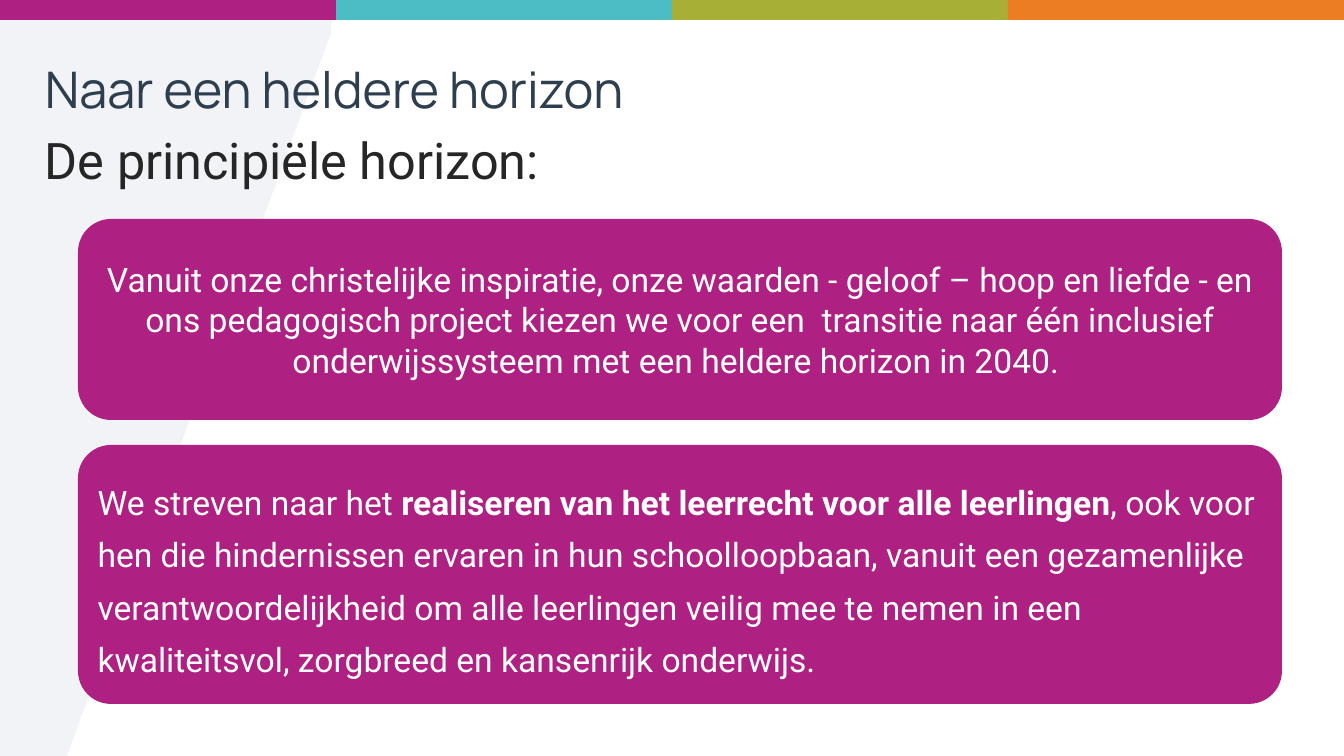
from lxml.etree import SubElement
from pptx import Presentation
from pptx.dml.color import RGBColor
from pptx.enum.shapes import MSO_SHAPE
from pptx.enum.text import MSO_ANCHOR, PP_ALIGN
from pptx.oxml.ns import qn
from pptx.util import Pt

SCALE = 914400 / 100.8
WIDE, HIGH = 1344, 756
RADIUS = 33
HUES = {
    "plum": "AE2081", "teal": "4CBCC5", "olive": "A8AF37", "orange": "EC7D23",
    "mist": "E8ECF0", "navy": "2D3E4E", "ink": "262626", "white": "FFFFFF",
}


def px(count):
    return round(count * SCALE)


def paint(shape, hue):
    shape.shadow.inherit = False
    shape.fill.solid()
    shape.fill.fore_color.rgb = RGBColor.from_string(HUES[hue])
    shape.line.fill.background()


def style(run, size, face, hue, bold=False):
    run.font.size = Pt(size)
    run.font.name = face
    run.font.bold = bold
    run.font.color.rgb = RGBColor.from_string(HUES[hue])


def add_slant(slide, points):
    """Draw the pale, half-clear band behind the text."""
    pen = slide.shapes.build_freeform(*points[0], scale=SCALE)
    pen.add_line_segments(points[1:], close=True)
    slant = pen.convert_to_shape()
    paint(slant, "mist")
    tint = slant.fill._xPr.find(qn("a:solidFill"))[0]
    SubElement(tint, qn("a:alpha")).set("val", "59000")


def add_stripe(slide, left, top, width, height, hues):
    step = width / len(hues)
    for i, hue in enumerate(hues):
        bar = slide.shapes.add_shape(
            MSO_SHAPE.RECTANGLE, px(left + i * step), px(top), px(step), px(height))
        paint(bar, hue)


def add_head(slide, left, top, width, height, text, face, hue, anchor):
    box = slide.shapes.add_textbox(px(left), px(top), px(width), px(height))
    frame = box.text_frame
    frame.word_wrap = True
    frame.vertical_anchor = anchor
    frame.text = text
    style(frame.paragraphs[0].runs[0], 36, face, hue)


def add_card(slide, left, top, width, height, parts):
    """Draw a rounded card; parts are (text, bold) pairs. Return its paragraph."""
    card = slide.shapes.add_shape(
        MSO_SHAPE.ROUNDED_RECTANGLE, px(left), px(top), px(width), px(height))
    card.adjustments[0] = RADIUS / height
    paint(card, "plum")
    frame = card.text_frame
    frame.word_wrap = True
    frame.vertical_anchor = MSO_ANCHOR.MIDDLE
    para = frame.paragraphs[0]
    para.alignment = PP_ALIGN.LEFT
    for text, bold in parts:
        run = para.add_run()
        run.text = text
        style(run, 24, "Roboto", "white", bold)
    return para


def main():
    deck = Presentation()
    deck.slide_width, deck.slide_height = px(WIDE), px(HIGH)
    slide = deck.slides.add_slide(deck.slide_layouts[6])

    add_slant(slide, [(0, 5), (312, 5), (329, 13), (332, 22), (331, 33),
                      (67, HIGH), (0, HIGH)])
    add_stripe(slide, 0, 0, WIDE, 20, ["plum", "teal", "olive", "orange"])
    add_head(slide, 35, 52, 1081, 72, "Naar een heldere horizon",
             "Manrope", "navy", MSO_ANCHOR.MIDDLE)
    add_head(slide, 35, 124, 1081, 72, "De principiële horizon:",
             "Roboto", "ink", MSO_ANCHOR.TOP)

    creed = add_card(slide, 78, 219, 1204, 201, [
        ("Vanuit onze christelijke inspiratie, onze waarden - geloof – hoop en "
         "liefde - en ons pedagogisch project kiezen we voor een  transitie naar "
         "één inclusief onderwijssysteem met een heldere horizon in 2040. ", False)])
    creed.alignment = PP_ALIGN.CENTER

    goal = add_card(slide, 78, 445, 1204, 259, [
        ("We streven naar het ", False),
        ("realiseren van het leerrecht voor alle leerlingen", True),
        (", ook voor hen die hindernissen ervaren in hun schoolloopbaan, vanuit "
         "een gezamenlijke verantwoordelijkheid om alle leerlingen veilig mee te "
         "nemen in een kwaliteitsvol, zorgbreed en kansenrijk onderwijs.", False)])
    goal.line_spacing = 1.3
    goal.space_after = Pt(10)

    deck.save("out.pptx")


if __name__ == "__main__":
    main()
